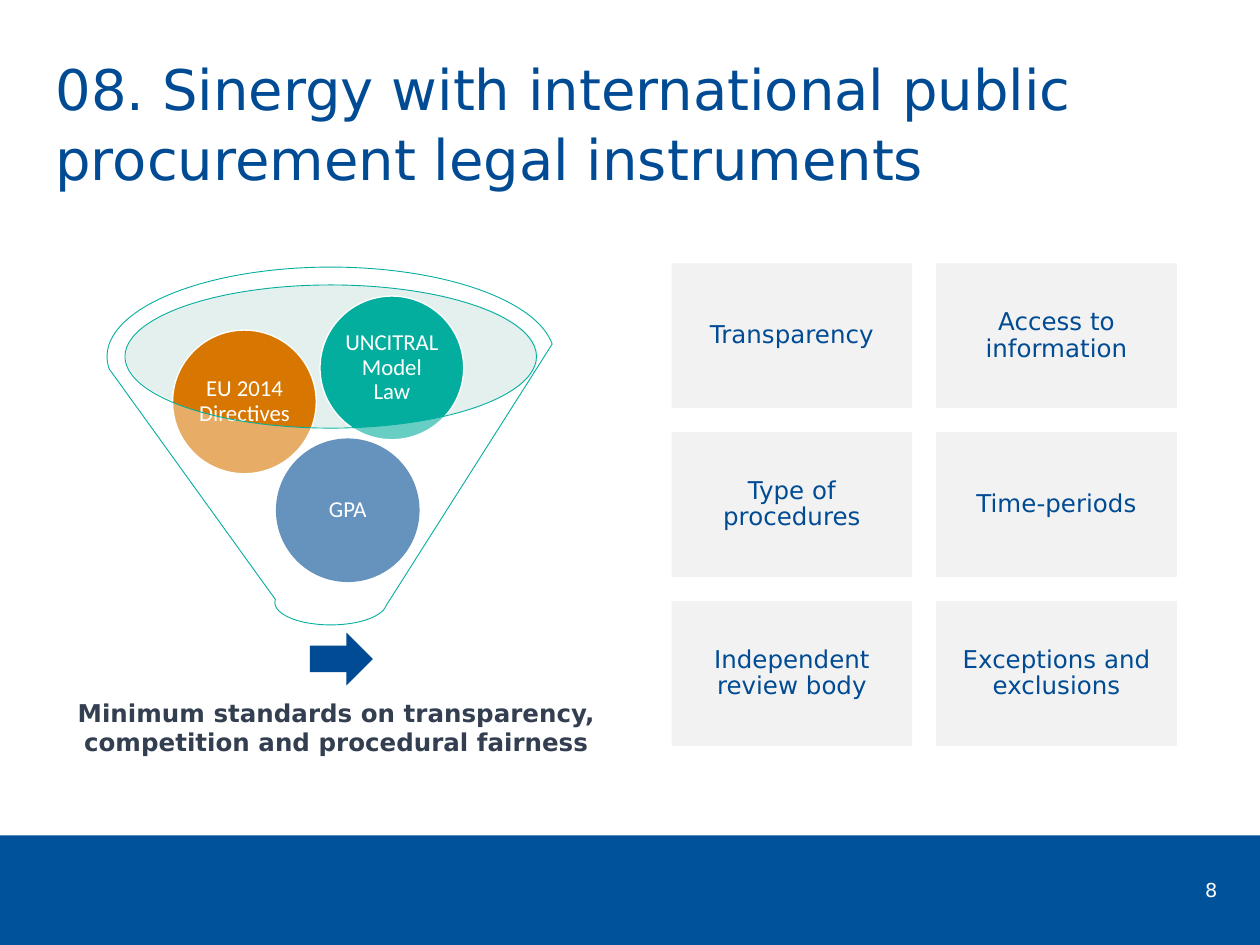
import pptx
import pptx.util
import pptx.oxml
import pptx.oxml.ns
from pptx.dml.color import RGBColor
from pptx.enum.shapes import MSO_SHAPE
from pptx.enum.text import MSO_ANCHOR, PP_ALIGN

Inches = pptx.util.Inches

# Content
TITLE = "08. Sinergy with international public procurement legal instruments"
RESULT = "Minimum standards on transparency, competition and procedural fairness"
PAGE = "8"
BALLS = [  # label, left, top, fill, line
    ("GPA", 2.19, 3.48, "blue", None),
    ("EU 2014 Directives", 1.37, 2.62, "orange", "white"),
    ("UNCITRAL Model Law", 2.54, 2.35, "teal", "white"),
]
TOPICS = [
    "Transparency", "Access to information",
    "Type of procedures", "Time-periods",
    "Independent review body", "Exceptions and exclusions",
]


class Theme:
    colors = dict(blue="004B93", bar="00539B", orange="D77701", teal="04AE9E",
                  mint="BDDBD5", gray="F2F2F2", dark="333F50", white="FFFFFF")
    sizes = dict(title=32, body=14, ball=13, page=11)
    head, ball = "DejaVu Sans", "Calibri"


def tint(name):
    return RGBColor.from_string(Theme.colors[name])


def write(shape, text, size="body", color="blue", font=Theme.head, bold=False,
          align=PP_ALIGN.CENTER, anchor=MSO_ANCHOR.MIDDLE, inset=(0.1, 0.05), space=1.0):
    frame = shape.text_frame
    frame.word_wrap = True
    frame.vertical_anchor = anchor
    frame.margin_left = frame.margin_right = Inches(inset[0])
    frame.margin_top = frame.margin_bottom = Inches(inset[1])
    frame.text = text
    para = frame.paragraphs[0]
    para.alignment = align
    para.line_spacing = space
    face = para.runs[0].font
    face.name, face.bold = font, bold
    face.size = pptx.util.Pt(Theme.sizes[size])
    face.color.rgb = tint(color)


def draw(slide, kind, box, fill, line=None, width=0.75, alpha=None):
    shape = slide.shapes.add_shape(kind, *map(Inches, box))
    shape.shadow.inherit = False
    shape.fill.solid()
    shape.fill.fore_color.rgb = tint(fill)
    if alpha:
        mark = shape.fill._xPr.find(".//" + pptx.oxml.ns.qn("a:srgbClr"))
        node = pptx.oxml.parse_xml(
            f'<a:alpha {pptx.oxml.ns.nsdecls("a")} val="{alpha * 1000}"/>')
        mark.append(node)
    if line:
        shape.line.color.rgb = tint(line)
        shape.line.width = pptx.util.Pt(width)
    else:
        shape.line.fill.background()
    return shape


def label(slide, box, text, **style):
    write(slide.shapes.add_textbox(*map(Inches, box)), text, **style)


def main():
    deck = pptx.Presentation()
    deck.slide_width, deck.slide_height = Inches(10), Inches(7.5)
    slide = deck.slides.add_slide(deck.slide_layouts[5])

    # Footer bar and page number
    draw(slide, MSO_SHAPE.RECTANGLE, (0, 6.63, 10, 0.87), "bar")
    label(slide, (7.68, 6.92, 2.08, 0.29), PAGE, size="page", color="white",
          align=PP_ALIGN.RIGHT)

    # Title
    title = slide.shapes.title
    title.left, title.top, title.width, title.height = map(Inches, (0.34, 0.36, 9.43, 0.55))
    write(title, TITLE, size="title", align=PP_ALIGN.LEFT, anchor=MSO_ANCHOR.TOP, space=1.04)

    # Funnel: mouth, arrow and result, balls, then the glass over them
    draw(slide, MSO_SHAPE.OVAL, (1, 2.26, 3.27, 1.13), "mint", alpha=40)
    draw(slide, MSO_SHAPE.RIGHT_ARROW, (2.46, 5.02, 0.5, 0.42), "blue")
    label(slide, (-0.14, 5.39, 5.62, 0.76), RESULT, color="dark", bold=True,
          inset=(0.11, 0.11))
    side = 1.14
    for text, left, top, fill, line in BALLS:
        ball = draw(slide, MSO_SHAPE.OVAL, (left, top, side, side), fill, line)
        write(ball, text, size="ball", color="white", font=Theme.ball,
              inset=(0.02, 0.02), space=0.9)
    draw(slide, MSO_SHAPE.FUNNEL, (0.85, 2.12, 3.55, 2.84), "white", "teal", 0.5, alpha=40)

    # Topic grid
    wide, high, gap = 1.91, 1.15, 0.19
    for i, text in enumerate(TOPICS):
        row, col = divmod(i, 2)
        box = (5.33 + col * (wide + gap), 2.09 + row * (high + gap), wide, high)
        tile = draw(slide, MSO_SHAPE.RECTANGLE, box, "gray")
        write(tile, text, inset=(0.06, 0.06), space=0.9)

    deck.save("out.pptx")


if __name__ == "__main__":
    main()
